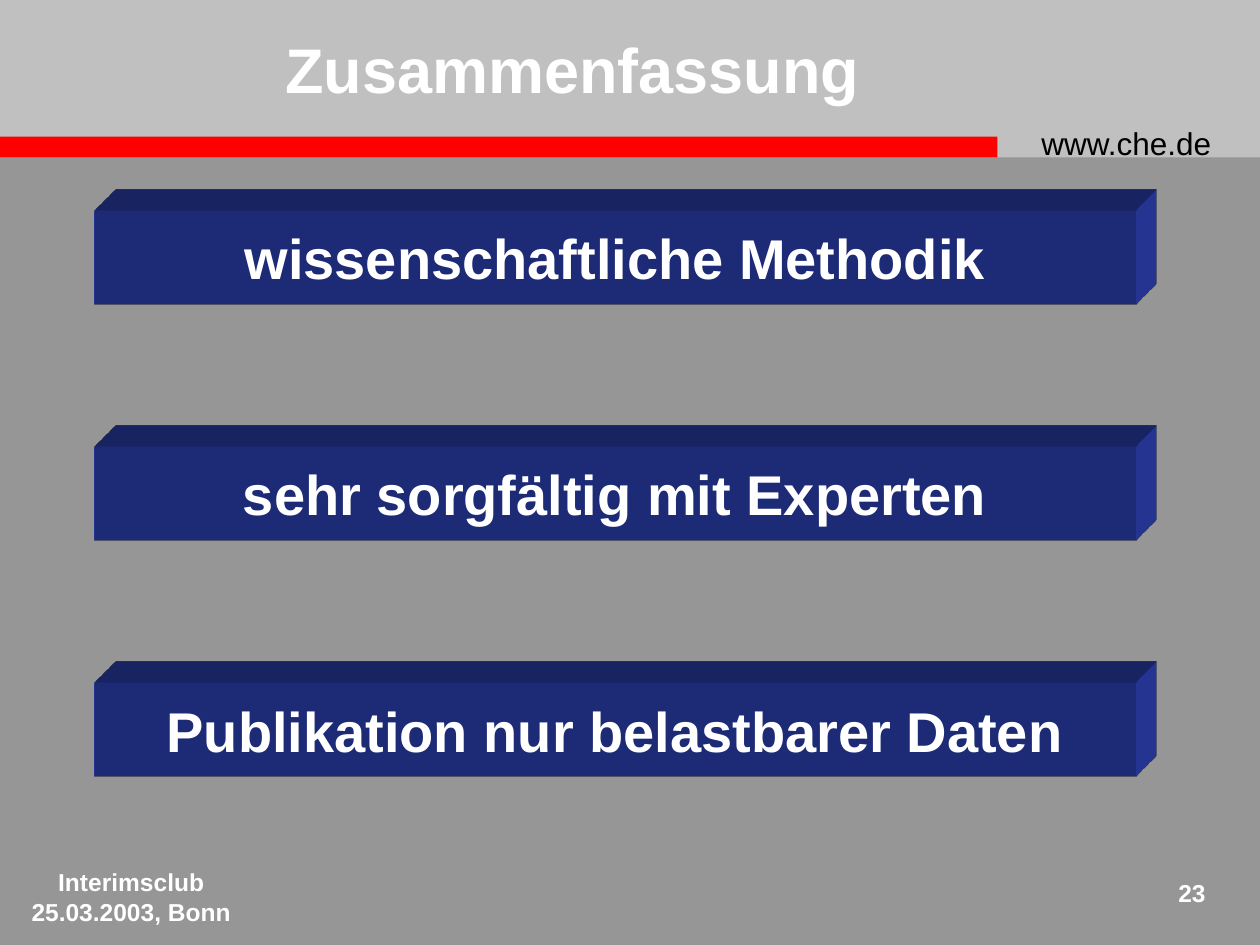
"""Builds the summary slide with three raised statement bars."""
from pptx import Presentation
from pptx.dml.color import RGBColor
from pptx.enum.shapes import MSO_SHAPE
from pptx.enum.text import MSO_ANCHOR, PP_ALIGN
from pptx.oxml import parse_xml
from pptx.oxml.ns import nsdecls
from pptx.util import Inches, Pt

RECTANGLE = MSO_SHAPE.RECTANGLE
TOP, MIDDLE = MSO_ANCHOR.TOP, MSO_ANCHOR.MIDDLE
LEFT, CENTER, RIGHT = PP_ALIGN.LEFT, PP_ALIGN.CENTER, PP_ALIGN.RIGHT
COLORS = {
    "background": "969696", "header": "C0C0C0", "rule": "FF0000",
    "bar": "293BA5", "light": "FFFFFF", "dark": "000000",
}
SCENE = (
    f'<a:scene3d {nsdecls("a")}><a:camera prst="legacyObliqueTopRight"/>'
    '<a:lightRig rig="legacyFlat3" dir="b"/></a:scene3d>'
)
EXTRUSION = (
    f'<a:sp3d {nsdecls("a")} extrusionH="430200" prstMaterial="legacyMatte">'
    '<a:bevelT w="13500" h="13500" prst="angle"/>'
    '<a:bevelB w="13500" h="13500" prst="angle"/>'
    f'<a:extrusionClr><a:srgbClr val="{COLORS["bar"]}"/></a:extrusionClr></a:sp3d>'
)

prs = Presentation()
prs.slide_width, prs.slide_height = Inches(10), Inches(7.5)
COLUMN = prs.slide_width / 120
ROW = prs.slide_height / 90
slide = prs.slides.add_slide(prs.slide_layouts[6])
slide.background.fill.solid()
slide.background.fill.fore_color.rgb = RGBColor.from_string(COLORS["background"])


def add_block(color, column, row, columns, rows):
    block = slide.shapes.add_shape(
        RECTANGLE, int(column * COLUMN), int(row * ROW), int(columns * COLUMN), int(rows * ROW))
    block.shadow.inherit = False
    block.fill.solid()
    block.fill.fore_color.rgb = RGBColor.from_string(COLORS[color])
    block.line.fill.background()
    return block


def write(shape, text, size, align, anchor, color="light", bold=True, wrap=True):
    frame = shape.text_frame
    frame.text = text
    frame.word_wrap = wrap
    frame.vertical_anchor = anchor
    paragraph = frame.paragraphs[0]
    paragraph.alignment = align
    font = paragraph.runs[0].font
    font.name, font.size, font.bold = "Arial", Pt(size), bold
    font.color.rgb = RGBColor.from_string(COLORS[color])


add_block("header", 0, 0, 120, 15)
add_block("rule", -0.1, 13, 95.1, 2)

labels = [
    ("www.che.de", 98, 11.25, 21, 4.75, 18, LEFT, TOP, "dark", False),
    ("Interimsclub 25.03.2003, Bonn", 0, 82, 25, 6, 14, CENTER, TOP, "light", True),
    ("23", 109, 83, 7, 5, 14, RIGHT, TOP, "light", True),
    ("Zusammenfassung", 26, 0, 73, 13, 36, LEFT, MIDDLE, "light", True),
]
for text, column, row, columns, rows, *style in labels:
    label = slide.shapes.add_textbox(
        int(column * COLUMN), int(row * ROW), int(columns * COLUMN), int(rows * ROW))
    write(label, text, *style)

statements = [
    "wissenschaftliche Methodik",
    "sehr sorgfältig mit Experten",
    "Publikation nur belastbarer Daten",
]
FIRST_BAR, BAR_STEP = 20, 22.5
for index, statement in enumerate(statements):
    bar = add_block("bar", 9, FIRST_BAR + index * BAR_STEP, 99.2, 9)
    for effect in (SCENE, EXTRUSION):
        bar.element.spPr.append(parse_xml(effect))
    write(bar, statement, 32, CENTER, MIDDLE, wrap=False)

prs.save("out.pptx")
